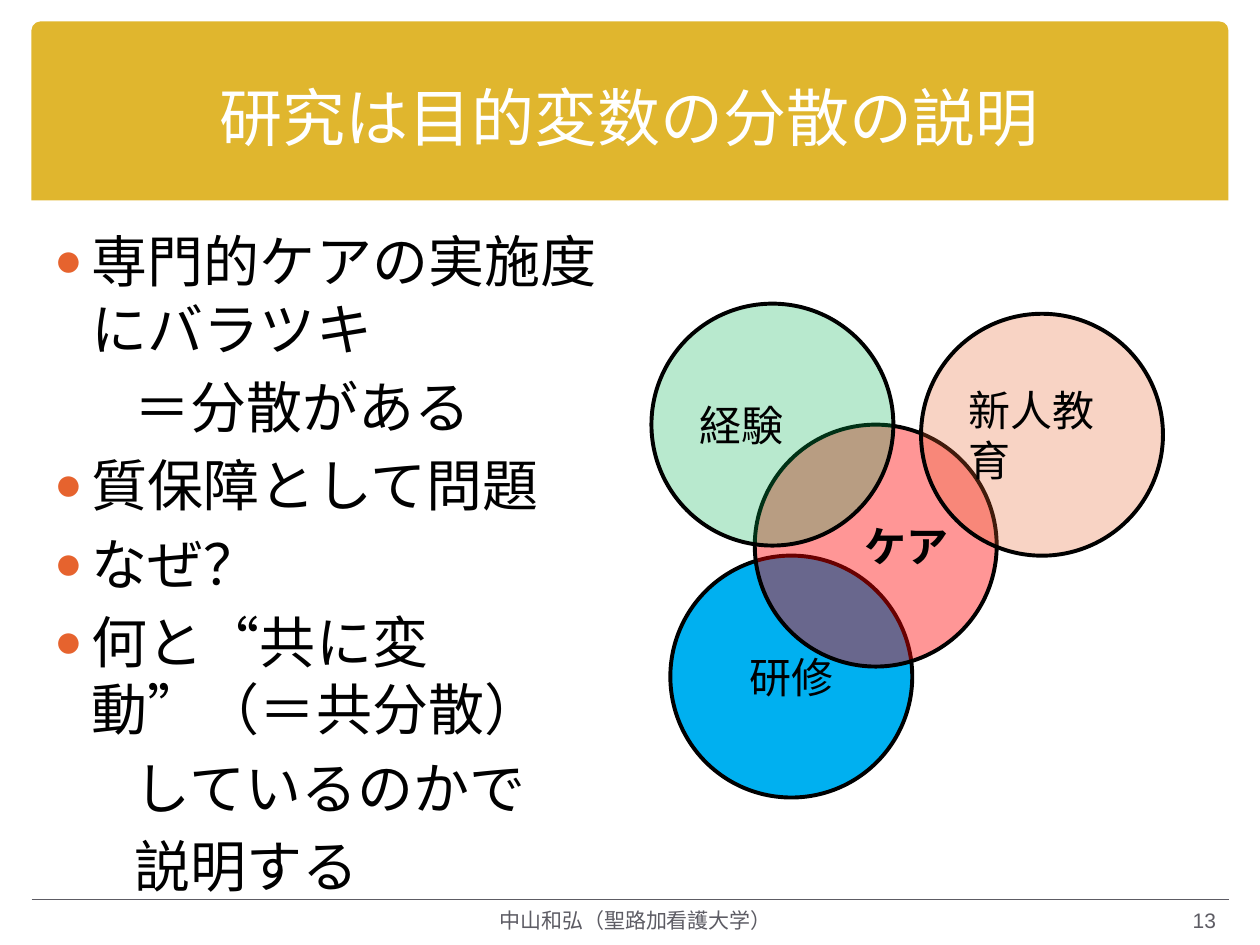
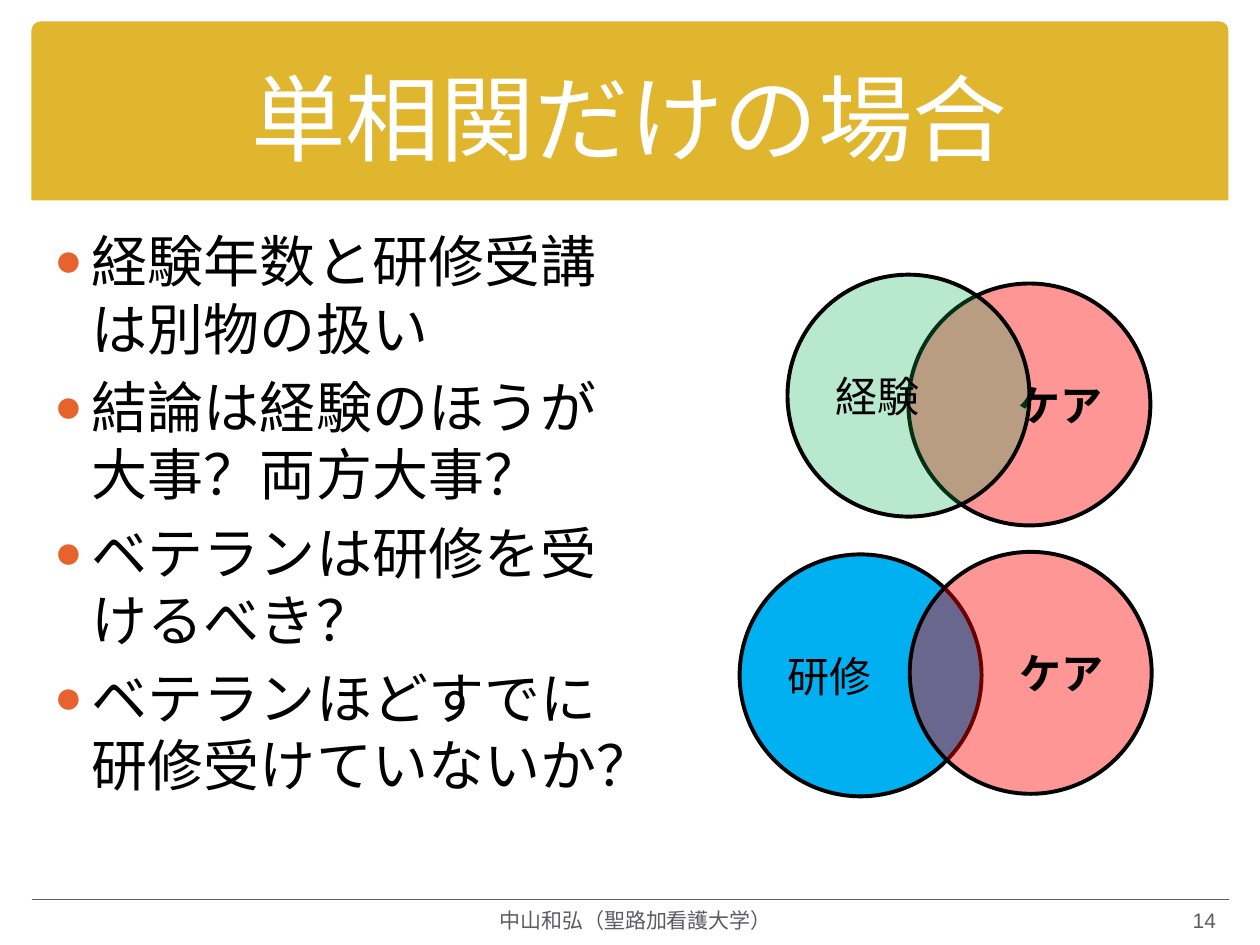
from dataclasses import dataclass

from lxml import etree
from pptx import Presentation
from pptx import util as u
from pptx.dml.color import RGBColor
from pptx.enum import shapes, text
from pptx.oxml import ns


@dataclass(frozen=True)
class Theme:
    band: str = "E0B62E"
    accent: str = "E6632E"
    ink: str = "000000"
    muted: str = "5D5C64"
    white: str = "FFFFFF"
    blue: str = "00B0F0"
    red: str = "FF0000"
    green: str = "00B050"
    title_font: str = "Montserrat"
    body_font: str = "Arial"
    body_size: int = 32
    circle_size: int = 24
    footer_size: int = 12


THEME = Theme()
FOOTER = "中山和弘（聖路加看護大学）"
DIAMETER = 1.92
LEFT, CENTER, RIGHT = text.PP_ALIGN.LEFT, text.PP_ALIGN.CENTER, text.PP_ALIGN.RIGHT

# Circle label: (fill colour, opacity in percent, alignment, bold)
CIRCLE_STYLES = {
    "研修": (THEME.blue, 100, LEFT, False),
    "ケア": (THEME.red, 41, RIGHT, True),
    "経験": (THEME.green, 28, LEFT, False),
    "新人教育": (THEME.accent, 28, LEFT, False),
}


def rgb(color):
    return RGBColor.from_string(color)


def box(left, top, width, height):
    return [u.Inches(value) for value in (left, top, width, height)]


def place(shape, left, top, width, height):
    shape.left, shape.top, shape.width, shape.height = box(left, top, width, height)


def style_paragraph(paragraph, size, color, font=THEME.body_font, align=LEFT, bold=False):
    paragraph.alignment = align
    paragraph.font.size = u.Pt(size)
    paragraph.font.name = font
    paragraph.font.bold = bold
    paragraph.font.color.rgb = rgb(color)


def add_xml(parent, tag, **attributes):
    return etree.SubElement(parent, ns.qn(tag), attributes)


def set_indent(paragraph, margin, first_line):
    properties = paragraph._p.get_or_add_pPr()
    properties.set("marL", str(u.Inches(margin)))
    properties.set("indent", str(u.Inches(first_line)))
    return properties


def set_bullet(paragraph):
    properties = set_indent(paragraph, 0.3, -0.3)
    add_xml(add_xml(properties, "a:buClr"), "a:srgbClr", val=THEME.accent)
    add_xml(properties, "a:buSzPct", val="85000")
    add_xml(properties, "a:buChar", char="●")


def set_continuation(paragraph):
    """Indent a line that carries on the bullet above it."""
    add_xml(set_indent(paragraph, 0.64, 0), "a:buNone")


def add_band(slide):
    band = slide.shapes.add_shape(
        shapes.MSO_SHAPE.ROUND_2_SAME_RECTANGLE, *box(0.25, 0.17, 9.5, 1.42))
    band.adjustments[0], band.adjustments[1] = 0.05, 0
    band.shadow.inherit = False
    band.fill.solid()
    band.fill.fore_color.rgb = rgb(THEME.band)
    band.line.fill.background()
    slide.shapes.title._element.addprevious(band._element)


def add_footer_text(slide, content, left, width, align):
    footer = slide.shapes.add_textbox(*box(left, 7.13, width, 0.35))
    frame = footer.text_frame
    frame.word_wrap = True
    frame.vertical_anchor = text.MSO_ANCHOR.MIDDLE
    frame.text = content
    style_paragraph(frame.paragraphs[0], THEME.footer_size, THEME.muted, align=align)


def add_footer(slide, number):
    rule = slide.shapes.add_connector(
        shapes.MSO_CONNECTOR.STRAIGHT, *box(0.25, 7.14, 9.75, 7.14))
    rule.line.color.rgb = rgb(THEME.muted)
    rule.line.width = u.Pt(1)
    add_xml(rule._element.spPr, "a:effectLst")
    add_footer_text(slide, FOOTER, 3.17, 3.75, CENTER)
    add_footer_text(slide, str(number), 7.42, 2.33, RIGHT)


def fill_title(slide, content, size):
    title = slide.shapes.title
    place(title, 0.33, 0.3, 9.33, 1.25)
    frame = title.text_frame
    frame.text = content
    frame.auto_size = text.MSO_AUTO_SIZE.NONE
    frame.vertical_anchor = text.MSO_ANCHOR.MIDDLE
    style_paragraph(frame.paragraphs[0], size, THEME.white, THEME.title_font, CENTER)


def fill_body(slide, lines):
    """Fill the list; each line is (wording, has a bullet)."""
    body = slide.placeholders[1]
    place(body, 0.33, 1.75, 4.55, 5.2)
    frame = body.text_frame
    frame.text = "\n".join(wording for wording, _ in lines)
    frame.auto_size = text.MSO_AUTO_SIZE.NONE
    for paragraph, (_, bulleted) in zip(frame.paragraphs, lines):
        style_paragraph(paragraph, THEME.body_size, THEME.ink)
        if bulleted:
            set_bullet(paragraph)
        else:
            set_continuation(paragraph)


def add_circle(parent, label, left, top, align=None):
    """Add a labelled circle to a slide or group; align overrides its style."""
    color, opacity, usual_align, bold = CIRCLE_STYLES[label]
    circle = parent.shapes.add_shape(
        shapes.MSO_SHAPE.OVAL, *box(left, top, DIAMETER, DIAMETER))
    circle.shadow.inherit = False
    circle.fill.solid()
    circle.fill.fore_color.rgb = rgb(color)
    if opacity < 100:
        solid_color = circle._element.spPr.find(ns.qn("a:solidFill"))[0]
        add_xml(solid_color, "a:alpha", val=str(opacity * 1000))
    circle.line.color.rgb = rgb(THEME.ink)
    circle.line.width = u.Pt(2.25)
    frame = circle.text_frame
    frame.word_wrap = True
    frame.vertical_anchor = text.MSO_ANCHOR.MIDDLE
    frame.text = label
    style_paragraph(frame.paragraphs[0], THEME.circle_size, THEME.ink,
                    align=align or usual_align, bold=bold)


def add_list_slide(presentation, number, title, title_size, lines):
    slide = presentation.slides.add_slide(presentation.slide_layouts[1])
    add_band(slide)
    fill_title(slide, title, title_size)
    fill_body(slide, lines)
    add_footer(slide, number)
    return slide


def add_variance_slide(presentation):
    slide = add_list_slide(presentation, 13, "研究は目的変数の分散の説明", 36, [
        ("専門的ケアの実施度にバラツキ", True),
        ("＝分散がある", False),
        ("質保障として問題", True),
        ("なぜ？", True),
        ("何と“共に変動”（＝共分散）", True),
        ("しているのかで", False),
        ("説明する", False),
    ])
    overlap = slide.shapes.add_group_shape()
    add_circle(overlap, "研修", 5.32, 4.41, CENTER)
    add_circle(overlap, "ケア", 5.99, 3.37)
    add_circle(overlap, "経験", 5.17, 2.41)
    add_circle(slide, "新人教育", 7.31, 2.49)


def add_correlation_slide(presentation):
    slide = add_list_slide(presentation, 14, "単相関だけの場合", 54, [
        ("経験年数と研修受講は別物の扱い", True),
        ("結論は経験のほうが大事？両方大事？", True),
        ("ベテランは研修を受けるべき？", True),
        ("ベテランほどすでに研修受けていないか？", True),
    ])
    add_circle(slide, "研修", 5.87, 4.4)
    add_circle(slide, "ケア", 7.21, 2.25)
    add_circle(slide, "経験", 6.25, 2.18)
    add_circle(slide, "ケア", 7.22, 4.38)


def main():
    presentation = Presentation()
    presentation.slide_width = u.Inches(10)
    presentation.slide_height = u.Inches(7.5)
    add_variance_slide(presentation)
    add_correlation_slide(presentation)
    presentation.save("out.pptx")


if __name__ == "__main__":
    main()
